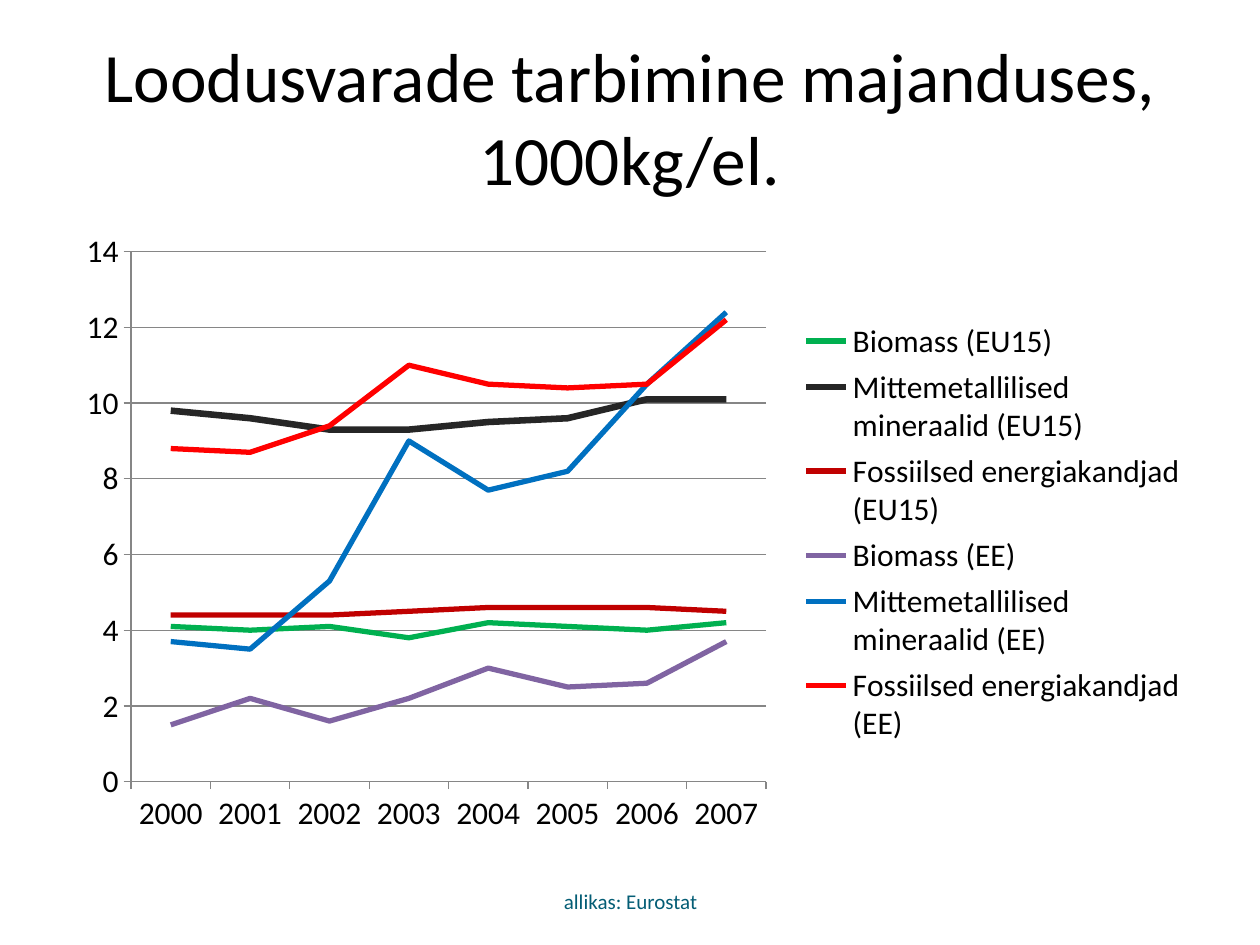
from dataclasses import dataclass

from lxml import etree
from pptx import Presentation
from pptx.chart.data import CategoryChartData
from pptx.dml.color import RGBColor
from pptx.enum.chart import XL_CHART_TYPE as ChartType
from pptx.enum.chart import XL_LEGEND_POSITION as LegendPosition
from pptx.enum.chart import XL_MARKER_STYLE as MarkerStyle
from pptx.enum.chart import XL_TICK_MARK as TickMark
from pptx.enum.text import MSO_ANCHOR as Anchor
from pptx.enum.text import PP_ALIGN as Align
from pptx.oxml.ns import qn
from pptx.util import Inches, Pt


@dataclass(frozen=True)
class Theme:
    font: str = "Calibri"
    text: str = "000000"
    source: str = "045D75"
    axis: str = "868686"
    title_size: float = 39.6
    chart_size: float = 18
    source_size: float = 12
    line_width: float = 3
    axis_width: float = 0.75


YEARS = [str(year) for year in range(2000, 2008)]

# Name, colour, line width (None for the usual one), values
SERIES = [
    ("Biomass (EU15)", "00B050", None, (4.1, 4, 4.1, 3.8, 4.2, 4.1, 4, 4.2)),
    ("Mittemetallilised mineraalid (EU15)", "262626", 3.75,
     (9.8, 9.6, 9.3, 9.3, 9.5, 9.6, 10.1, 10.1)),
    ("Fossiilsed energiakandjad (EU15)", "C00000", None,
     (4.4, 4.4, 4.4, 4.5, 4.6, 4.6, 4.6, 4.5)),
    ("Biomass (EE)", "8064A2", None, (1.5, 2.2, 1.6, 2.2, 3, 2.5, 2.6, 3.7)),
    ("Mittemetallilised mineraalid (EE)", "0070C0", None,
     (3.7, 3.5, 5.3, 9, 7.7, 8.2, 10.5, 12.4)),
    ("Fossiilsed energiakandjad (EE)", "FF0000", None,
     (8.8, 8.7, 9.4, 11, 10.5, 10.4, 10.5, 12.2)),
]


class SlideBuilder:
    def __init__(self, slide, theme):
        self.slide = slide
        self.theme = theme

    def style_font(self, font, size, color):
        font.name = self.theme.font
        font.size = Pt(size)
        font.color.rgb = RGBColor.from_string(color)

    def style_line(self, line, color, width):
        line.color.rgb = RGBColor.from_string(color)
        line.width = Pt(width)

    def add_text(self, text, left, top, width, height, size, color):
        box = self.slide.shapes.add_textbox(
            Inches(left), Inches(top), Inches(width), Inches(height))
        text_frame = box.text_frame
        text_frame.word_wrap = True
        text_frame.vertical_anchor = Anchor.MIDDLE
        text_frame.text = text
        paragraph = text_frame.paragraphs[0]
        paragraph.alignment = Align.CENTER
        self.style_font(paragraph.runs[0].font, size, color)

    def set_layout(self, element, index, inner=False, **fractions):
        """Place a chart part by fractions of the chart's size."""
        for old_layout in element.findall(qn("c:layout")):
            element.remove(old_layout)
        layout = etree.Element(qn("c:layout"))
        manual = etree.SubElement(layout, qn("c:manualLayout"))
        settings = {"layoutTarget": "inner"} if inner else {}
        settings.update(xMode="edge", yMode="edge", **fractions)
        for name, value in settings.items():
            etree.SubElement(manual, qn(f"c:{name}")).set("val", str(value))
        element.insert(index, layout)

    def add_line_chart(self, categories, series_list, left, top, width, height):
        theme = self.theme
        data = CategoryChartData()
        data.categories = categories
        for name, _, _, values in series_list:
            data.add_series(name, values)
        chart = self.slide.shapes.add_chart(
            ChartType.LINE, Inches(left), Inches(top),
            Inches(width), Inches(height), data).chart
        chart.has_title = False
        self.style_font(chart.font, theme.chart_size, theme.text)

        # Series
        plot = chart.plots[0]
        plot.vary_by_categories = False
        for series, (_, color, line_width, _) in zip(plot.series, series_list):
            series.smooth = False
            series.marker.style = MarkerStyle.NONE
            self.style_line(series.format.line, color,
                            line_width or theme.line_width)

        # Axes and gridlines
        value_axis = chart.value_axis
        value_axis.minimum_scale = 0
        value_axis.maximum_scale = 14
        value_axis.major_unit = 2
        value_axis.has_major_gridlines = True
        for axis in (chart.category_axis, value_axis):
            axis.major_tick_mark = TickMark.OUTSIDE
            axis.minor_tick_mark = TickMark.NONE
        for part in (chart.category_axis, value_axis,
                     value_axis.major_gridlines):
            self.style_line(part.format.line, theme.axis, theme.axis_width)

        # Legend and plot placement
        chart.has_legend = True
        legend = chart.legend
        legend.position = LegendPosition.RIGHT
        legend.include_in_layout = False
        plot_area = chart.element.find(".//" + qn("c:plotArea"))
        legend_element = chart.element.find(".//" + qn("c:legend"))
        self.set_layout(plot_area, 0, inner=True, x=0.06, y=0.05, w=0.56, h=0.85)
        self.set_layout(legend_element, 1, x=0.65, y=0.15, w=0.34, h=0.7)


def main():
    presentation = Presentation()
    presentation.slide_width = Inches(10)
    presentation.slide_height = Inches(7.5)
    slide = presentation.slides.add_slide(presentation.slide_layouts[6])
    theme = Theme()
    builder = SlideBuilder(slide, theme)

    # Title
    builder.add_text("Loodusvarade tarbimine majanduses, 1000kg/el.",
                     0.5, 0.3, 9, 1.25, theme.title_size, theme.text)

    # Consumption by year
    builder.add_line_chart(YEARS, SERIES, 0.5, 1.75, 9, 4.95)

    # Source
    builder.add_text("allikas: Eurostat", 3.42, 6.95, 3.17, 0.4,
                     theme.source_size, theme.source)

    presentation.save("out.pptx")


if __name__ == "__main__":
    main()
